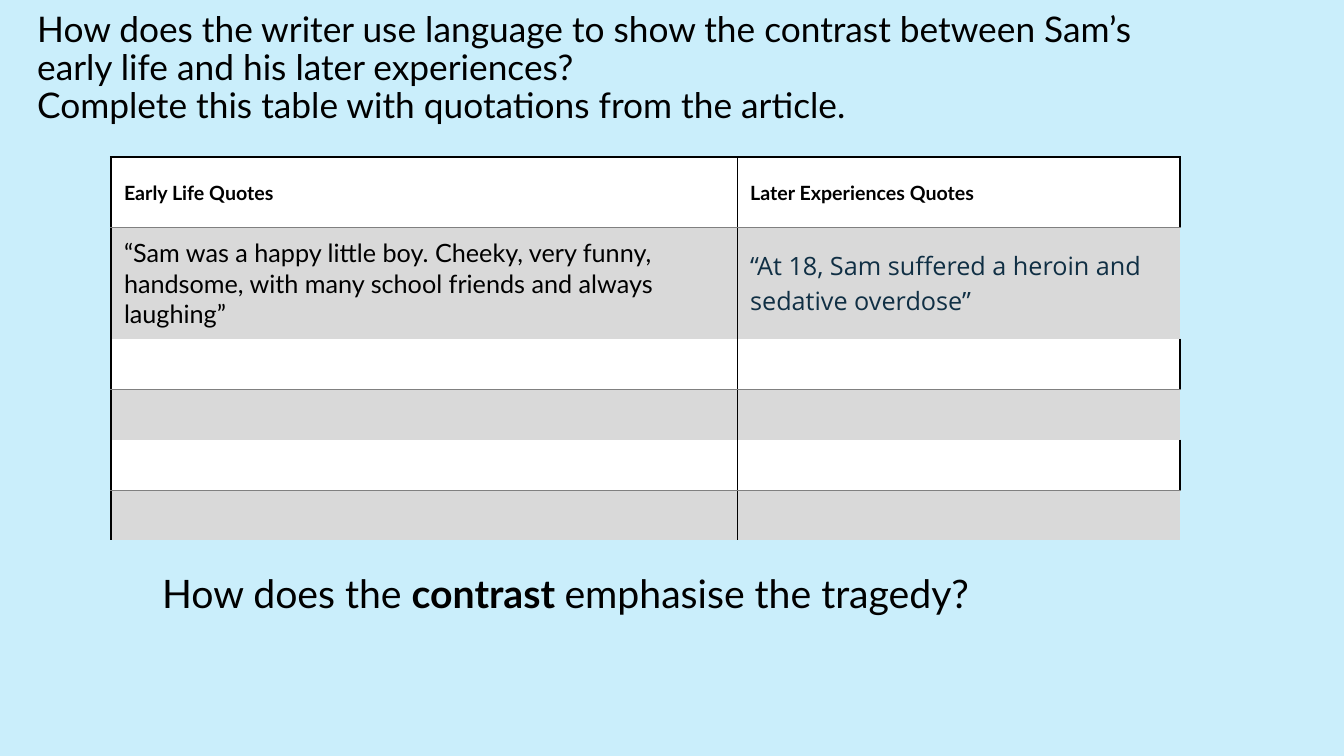
from typing import NamedTuple, Optional

from lxml import etree
from pptx import Presentation
from pptx.dml.color import RGBColor
from pptx.enum import text
from pptx.oxml import ns
from pptx import util as u

PX = 9144
BLACK, GREY, WHITE, RULE = "000000", "D9D9D9", "FFFFFF", "808080"
PLAIN = "{2D5ABB26-0587-4C30-8999-92F81FD0307C}"


class Line(NamedTuple):
    color: str
    width: float


class Run(NamedTuple):
    words: str
    size: float
    bold: bool = False
    font: str = "Lato"
    color: str = BLACK


class Box(NamedTuple):
    left: int
    top: int
    width: int
    height: int
    lines: list[list[Run]]
    anchor: text.MSO_ANCHOR
    space: float


EDGE, SPLIT, HAIR = Line(BLACK, 1.5), Line(BLACK, 0.75), Line(RULE, 0.5)


def px(n: int) -> u.Emu:
    return u.Emu(n * PX)


def rgb(code: str) -> RGBColor:
    return RGBColor.from_string(code)


def write(para, run: Run) -> None:
    part = para.add_run()
    part.text = run.words
    font = part.font
    font.size, font.bold, font.name = u.Pt(run.size), run.bold, run.font
    font.color.rgb = rgb(run.color)


def draw_box(slide, box: Box) -> None:
    frame = slide.shapes.add_textbox(*map(px, box[:4])).text_frame
    frame.word_wrap = True
    frame.vertical_anchor = box.anchor
    para = frame.paragraphs[0]
    para.line_spacing = box.space
    for i, line in enumerate(box.lines):
        if i:
            para.add_line_break()
        for run in line:
            write(para, run)


def edge(cell, lines: dict[str, Optional[Line]]) -> None:
    props = cell._tc.get_or_add_tcPr()
    for i, (side, line) in enumerate(lines.items()):
        node = etree.Element(ns.qn(f"a:ln{side}"))
        if line:
            node.set("w", str(u.Pt(line.width)))
            fill = etree.SubElement(node, ns.qn("a:solidFill"))
            etree.SubElement(fill, ns.qn("a:srgbClr"), val=line.color)
        else:
            etree.SubElement(node, ns.qn("a:noFill"))
        props.insert(i, node)


def sides(row: int, col: int) -> dict[str, Optional[Line]]:
    left, right = (SPLIT, EDGE) if col else (EDGE, SPLIT)
    if row % 2:
        return {"L": left, "R": None if col else right, "T": HAIR, "B": None}
    return {"L": left, "R": right, "T": None if row else EDGE, "B": HAIR}


def draw_table(slide, left: int, top: int, cols: list[int], rows: list[int],
               quotes: list[list[Run]]) -> None:
    frame = slide.shapes.add_table(len(rows), len(cols), px(left), px(top),
                                   px(sum(cols)), px(sum(rows)))
    table = frame.table
    table._tbl.tblPr.find(ns.qn("a:tableStyleId")).text = PLAIN
    for col, width in zip(table.columns, cols):
        col.width = px(width)
    for r, height in enumerate(rows):
        table.rows[r].height = px(height)
        for c in range(len(cols)):
            cell = table.cell(r, c)
            cell.fill.solid()
            cell.fill.fore_color.rgb = rgb(GREY if r % 2 else WHITE)
            edge(cell, sides(r, c))
            cell.vertical_anchor = text.MSO_ANCHOR.MIDDLE
            cell.margin_left = px(13)
            cell.margin_top = cell.margin_right = cell.margin_bottom = px(10)
            if r < len(quotes):
                write(cell.text_frame.paragraphs[0], quotes[r][c])


TITLE = Box(27, 23, 1179, 91, [
    [Run("How does the writer use language to show the contrast between "
         "Sam’s early life and his later experiences? ", 25.2)],
    [Run("Complete this table with quotations from the article.", 25.2)],
], text.MSO_ANCHOR.MIDDLE, 0.9)

TASK = Box(151, 560, 935, 57, [[
    Run("How does the ", 28), Run("contrast ", 28, True),
    Run("emphasise the tragedy?", 28),
]], text.MSO_ANCHOR.TOP, 1.0)

QUOTES = [
    [Run("Early Life Quotes", 14, True), Run("Later Experiences Quotes", 14, True)],
    [Run("“Sam was a happy little boy. Cheeky, very funny, handsome, with "
         "many school friends and always laughing”", 18),
     Run("“At 18, Sam suffered a heroin and sedative overdose”", 18,
         font="Open Sans", color="102F44")],
]


def main() -> None:
    """Build the slide on contrasting quotations."""
    deck = Presentation()
    deck.slide_width, deck.slide_height = px(1333), px(750)
    slide = deck.slides.add_slide(deck.slide_layouts[6])
    slide.background.fill.solid()
    slide.background.fill.fore_color.rgb = rgb("CAEEFB")
    draw_box(slide, TITLE)
    draw_table(slide, 110, 156, [621, 439], [70, 108] + [50] * 4, QUOTES)
    draw_box(slide, TASK)
    deck.save("out.pptx")


if __name__ == "__main__":
    main()
